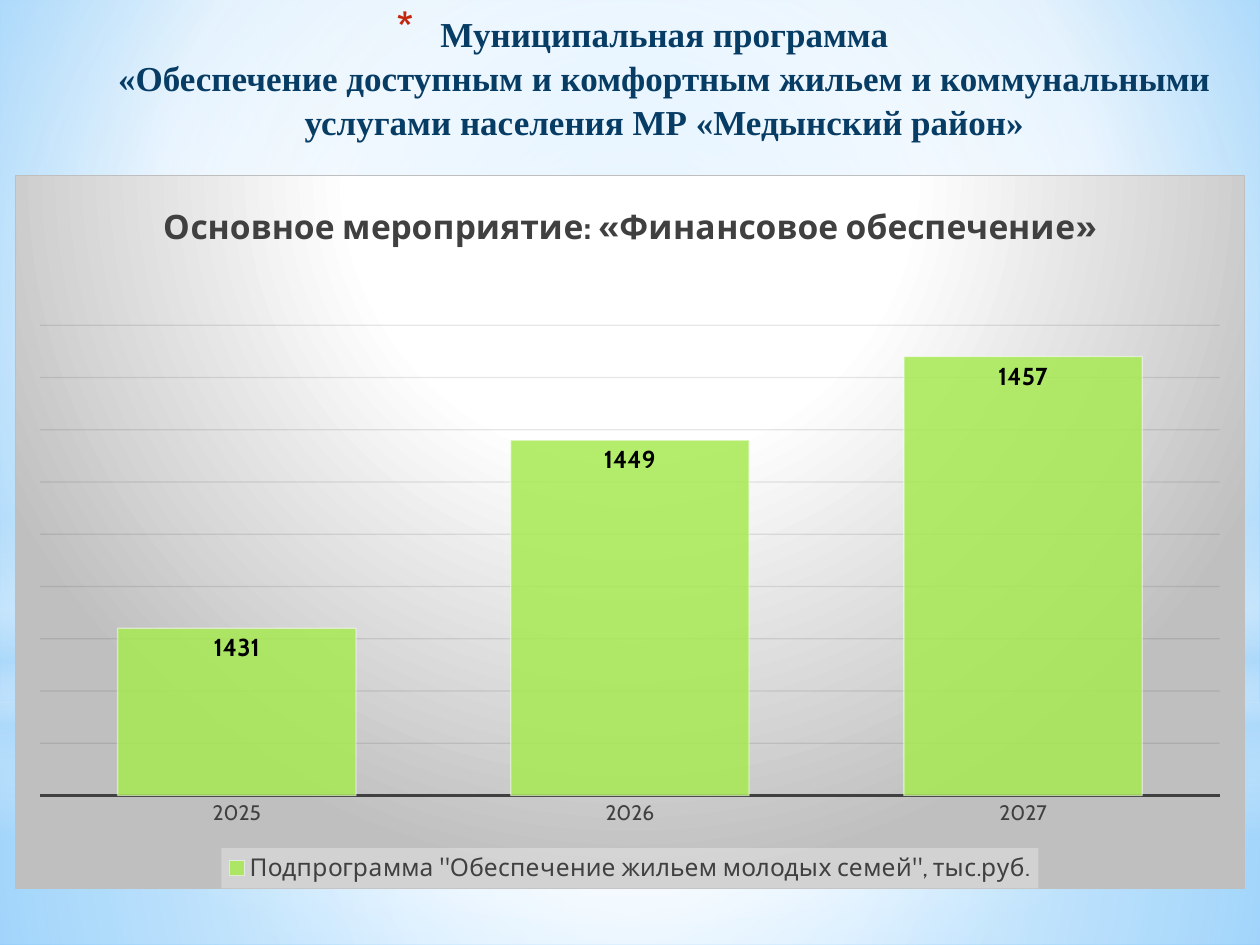
from pptx import Presentation
from pptx.chart.data import CategoryChartData as ChartData
from pptx.dml.color import RGBColor
from pptx.enum.chart import XL_CHART_TYPE as Kind, XL_LABEL_POSITION as Spot
from pptx.enum.chart import XL_LEGEND_POSITION as Side, XL_TICK_MARK as Tick
from pptx.enum.shapes import MSO_SHAPE as Form
from pptx.enum.text import PP_ALIGN as Align
from pptx.oxml import parse_xml
from pptx.oxml.ns import nsdecls, qn
from pptx.util import Emu, Pt

SCALE = 914400 / 126
GREY = "404040"
CENTER = (50, 50, 50, 50)


def px(n):
    return Emu(round(n * SCALE))


def box(*sides):
    return [px(n) for n in sides]


def color(code):
    return RGBColor.from_string(code)


def make_grad(stops, rect=None):
    marks = "".join(
        f'<a:gs pos="{pos * 1000}"><a:srgbClr val="{code}">'
        f'<a:alpha val="{alpha * 1000}"/></a:srgbClr></a:gs>'
        for pos, code, alpha in stops)
    if rect:
        edges = " ".join(f'{k}="{v * 1000}"' for k, v in zip("ltrb", rect))
        way = f'<a:path path="circle"><a:fillToRect {edges}/></a:path>'
    else:
        way = '<a:lin ang="5400000" scaled="0"/>'
    return parse_xml(f'<a:gradFill {nsdecls("a")} rotWithShape="1">'
                     f'<a:gsLst>{marks}</a:gsLst>{way}</a:gradFill>')


def set_grad(fill, root, stops, rect=None):
    fill.solid()
    old = next(root.iter(qn("a:solidFill")))
    old.getparent().replace(old, make_grad(stops, rect))


def paint(fill, code, alpha=100):
    fill.solid()
    fill.fore_color.rgb = color(code)
    if alpha < 100:
        tone = fill._xPr.find(qn("a:solidFill"))[0]
        tone.append(parse_xml(
            f'<a:alpha {nsdecls("a")} val="{alpha * 1000}"/>'))


def draw_line(line, code, width, alpha=100):
    line.width = Pt(width)
    paint(line.fill, code, alpha)


def set_font(font, size, code, name="Cabin", bold=False):
    font.size, font.name, font.bold = Pt(size), name, bold
    font.color.rgb = color(code)


def add_glow(slide, form, sides, stops, rect=None):
    shape = slide.shapes.add_shape(form, *box(*sides))
    shape.shadow.inherit = False
    shape.line.fill.background()
    set_grad(shape.fill, shape._element.spPr, stops, rect)


def add_back(slide):
    back = slide.background.fill
    set_grad(back, slide._element.cSld,
             [(0, "9ED5FF", 100), (60, "FFFFFF", 100), (100, "5BB9FF", 100)],
             (20, 10, 20, 60))
    add_glow(slide, Form.RECTANGLE, (0, 703, 1260, 242),
             [(0, "FFFFFF", 91), (37, "FFFFFF", 76), (100, "B4DCFA", 79)], CENTER)
    add_glow(slide, Form.RECTANGLE, (0, 0, 1260, 703),
             [(0, "FFFFFF", 89), (48, "FFFFFF", 62), (100, "B4DCFA", 79)], CENTER)
    add_glow(slide, Form.RECTANGLE, (0, 519, 1260, 315),
             [(0, "FFFFFF", 0), (29, "FFFFFF", 30), (45, "B4DCFA", 40),
              (55, "FFFFFF", 26), (65, "B4DCFA", 60), (100, "FFFFFF", 0)])
    add_glow(slide, Form.OVAL, (0, 220, 1260, 703),
             [(0, "FFFFFF", 100), (56, "FFFFFF", 0)], CENTER)


def add_title(slide, lines):
    frame = slide.shapes.add_textbox(*box(25, 5, 1235, 198)).text_frame
    frame.word_wrap = True
    para = frame.paragraphs[0]
    para.alignment = Align.CENTER
    para.line_spacing = 1.04
    props = para._p.get_or_add_pPr()
    props.set("marL", str(px(44)))
    props.set("indent", str(px(-44)))
    for tag in ('buClr><a:srgbClr val="C3260C"/></a:buClr',
                'buSzPct val="128000"/', 'buChar char="*"/'):
        head, dot, tail = tag.partition(">")
        name = f"<a:{head}{dot}{tail}>"
        props.append(parse_xml(
            name.replace(head, f"{head.rstrip('/')} {nsdecls('a')}"
                         + ("/" if head.endswith("/") else ""), 1)))
    for i, text in enumerate(lines):
        if i:
            para.add_line_break()
        run = para.add_run()
        run.text = text
        set_font(run.font, 20, "073C65", "Times New Roman", True)


def set_frame(chart):
    props = parse_xml(
        f'<c:spPr {nsdecls("c", "a")}><a:ln w="9525"><a:solidFill>'
        '<a:srgbClr val="BFBFBF"/></a:solidFill></a:ln></c:spPr>')
    props.insert(0, make_grad(
        [(0, "FFFFFF", 100), (39, "FFFFFF", 100), (100, "BFBFBF", 100)],
        (50, -80, 50, 180)))
    chart._chartSpace.find(qn("c:chart")).addnext(props)


def set_plot(chart):
    sizes = {"x": 0.02, "y": 0.21, "w": 0.96, "h": 0.66}
    parts = "".join(f'<c:{k}Mode val="edge"/>' for k in "xy")
    parts += "".join(f'<c:{k} val="{v}"/>' for k, v in sizes.items())
    area = chart._chartSpace.find(qn("c:chart")).find(qn("c:plotArea"))
    for old in area.findall(qn("c:layout")):
        area.remove(old)
    area.insert(0, parse_xml(
        f'<c:layout {nsdecls("c")}><c:manualLayout>'
        f'<c:layoutTarget val="inner"/>{parts}</c:manualLayout></c:layout>'))


def set_axes(chart):
    cat, val = chart.category_axis, chart.value_axis
    cat.major_tick_mark = cat.minor_tick_mark = Tick.NONE
    set_font(cat.tick_labels.font, 12, GREY)
    draw_line(cat.format.line, GREY, 1.5)
    val.minimum_scale, val.maximum_scale, val.major_unit = 1415, 1460, 5
    val.has_major_gridlines = True
    draw_line(val.major_gridlines.format.line, "0D0D0D", 0.75, 10)
    val.visible = False


def set_legend(chart):
    chart.has_legend = True
    legend = chart.legend
    legend.position = Side.BOTTOM
    legend.include_in_layout = False
    set_font(legend.font, 14, GREY)
    legend._element.find(qn("c:txPr")).addprevious(parse_xml(
        f'<c:spPr {nsdecls("c", "a")}><a:solidFill><a:srgbClr val="F2F2F2">'
        '<a:alpha val="39000"/></a:srgbClr></a:solidFill></c:spPr>'))


def set_bars(plot):
    plot.gap_width = 65
    plot.vary_by_categories = False
    bars = plot.series[0]
    paint(bars.format.fill, "A7EA52", 85)
    draw_line(bars.format.line, "FFFFFF", 0.75, 50)
    labels = bars.data_labels
    labels.show_value = True
    labels.position = Spot.INSIDE_END
    set_font(labels.font, 14, "000000", bold=True)


def add_chart(slide, title, name, cats, vals):
    data = ChartData()
    data.categories = cats
    data.add_series(name, vals)
    chart = slide.shapes.add_chart(
        Kind.COLUMN_CLUSTERED, *box(15, 175, 1230, 714), data).chart
    set_font(chart.font, 10, "000000")
    chart.has_title = True
    run = chart.chart_title.text_frame.paragraphs[0].add_run()
    run.text = title
    set_font(run.font, 19.2, GREY, bold=True)
    set_frame(chart)
    set_plot(chart)
    set_axes(chart)
    set_legend(chart)
    set_bars(chart.plots[0])


def main():
    deck = Presentation()
    deck.slide_width, deck.slide_height = box(1260, 945)
    slide = deck.slides.add_slide(deck.slide_layouts[6])
    add_back(slide)
    add_title(slide, [
        "Муниципальная программа",
        "«Обеспечение доступным и комфортным жильем и коммунальными "
        "услугами населения МР «Медынский район»"])
    add_chart(slide, "Основное мероприятие: «Финансовое обеспечение»",
              'Подпрограмма "Обеспечение жильем молодых семей", тыс.руб.',
              ["2025", "2026", "2027"], [1431, 1449, 1457])
    deck.save("out.pptx")


if __name__ == "__main__":
    main()
